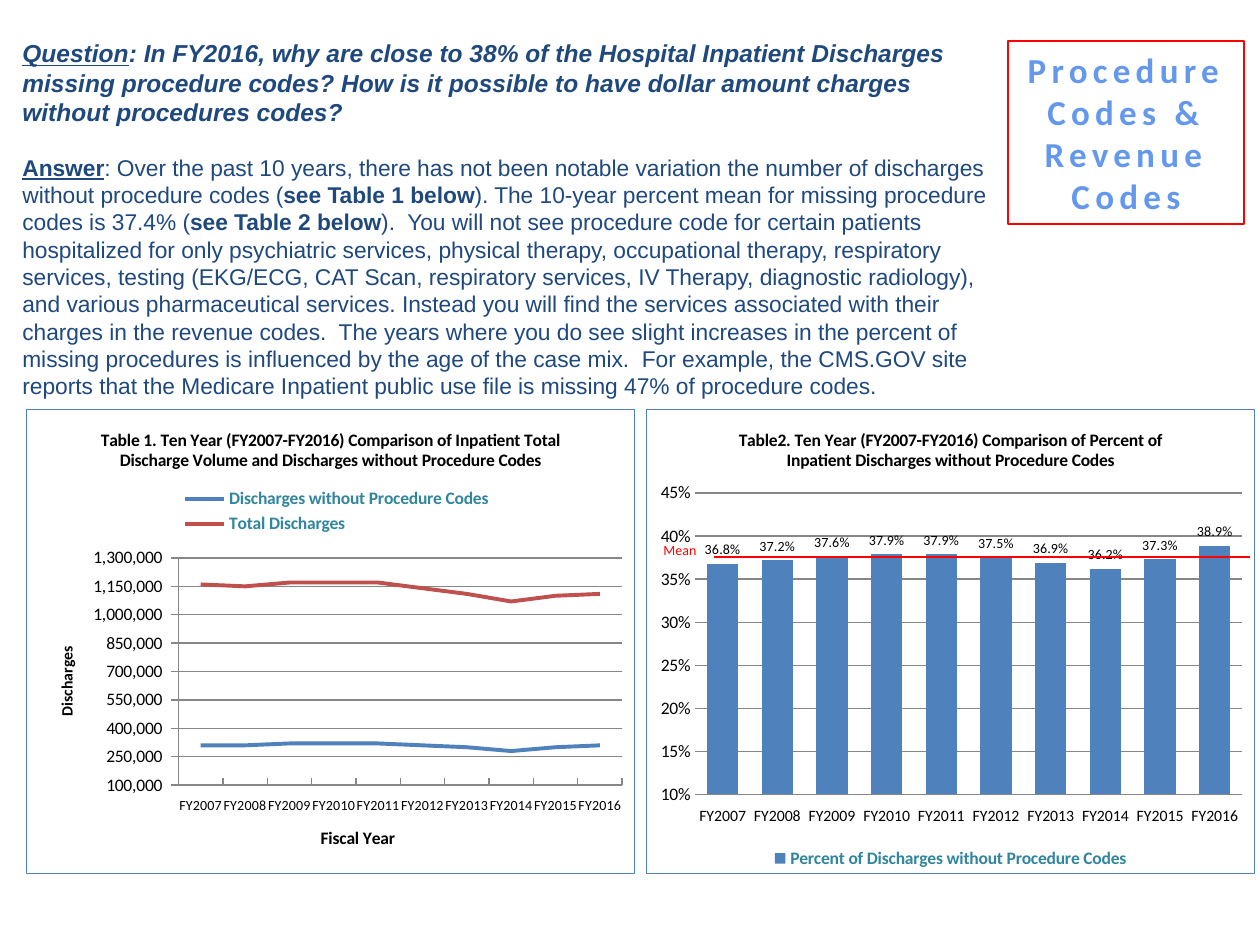
from lxml import etree
from pptx import Presentation
from pptx import util as u
from pptx.chart.data import CategoryChartData
from pptx.dml.color import RGBColor
from pptx.enum import chart as ch, shapes, text
from pptx.oxml import parse_xml
from pptx.oxml.ns import nsdecls, qn

EMU_PER_PIXEL = 914400 / 126
NAVY, BLUE, TEAL, RED, GRAY = "1F497D", "4F81BD", "31859C", "FF0000", "868686"


def px(*lengths):
    return [u.Emu(round(length * EMU_PER_PIXEL)) for length in lengths]


def color(value):
    return RGBColor.from_string(value)


presentation = Presentation()
presentation.slide_width, presentation.slide_height = px(1260, 945)
slide = presentation.slides.add_slide(presentation.slide_layouts[5])

# Title box
title = slide.shapes.title
title.left, title.top, title.width, title.height = px(1008, 41, 236, 183)
title.line.color.rgb = color(RED)
title.line.width = u.Pt(0.75)
frame = title.text_frame
frame.text = "Procedure Codes & Revenue Codes"
frame.word_wrap = True
frame.auto_size = text.MSO_AUTO_SIZE.NONE
frame.vertical_anchor = text.MSO_ANCHOR.MIDDLE
frame.paragraphs[0].alignment = text.PP_ALIGN.CENTER
run = frame.paragraphs[0].runs[0]
run.font.name, run.font.size, run.font.bold = "Calibri", u.Pt(20), True
run.font.fill.gradient()
run.font.fill.gradient_angle = 270
for stop, (position, value) in zip(run.font.fill.gradient_stops, [(0.1, "6398ED"), (0.75, "265EA0")]):
    stop.position = position
    stop.color.rgb = color(value)
properties = run.font._element
properties.set("spc", "300")
properties.insert(0, parse_xml(
    f'<a:ln {nsdecls("a")} w="11430"><a:solidFill><a:srgbClr val="F4F6F9"/></a:solidFill></a:ln>'))

# Charts: each entry holds what differs between the two
years = [f"FY{year}" for year in range(2007, 2017)]
charts = [
    dict(kind=ch.XL_CHART_TYPE.COLUMN_CLUSTERED, left=646,
         title="Table2. Ten Year (FY2007-FY2016) Comparison of Percent of "
               "Inpatient Discharges without Procedure Codes",
         series=[("Percent of Discharges without Procedure Codes", BLUE,
                  [0.368, 0.372, 0.376, 0.379, 0.379, 0.375, 0.369, 0.362, 0.373, 0.389])],
         low=0.1, high=0.45, step=0.05, format="0%", category_size=9,
         legend=ch.XL_LEGEND_POSITION.BOTTOM, plot_area=(0.08, 0.18, 0.9, 0.65)),
    dict(kind=ch.XL_CHART_TYPE.LINE_STACKED, left=26,
         title="Table 1. Ten Year (FY2007-FY2016) Comparison of Inpatient Total "
               "Discharge Volume and Discharges without Procedure Codes",
         series=[("Discharges without Procedure Codes", BLUE,
                  [310000, 310000, 320000, 320000, 320000, 310000, 300000, 280000, 300000, 310000]),
                 ("Total Discharges", "C0504D",
                  [850000, 840000, 850000, 850000, 850000, 830000, 810000, 790000, 800000, 800000])],
         low=100000, high=1300000, step=150000, format="#,##0_)", category_size=8,
         legend=ch.XL_LEGEND_POSITION.TOP, plot_area=(0.25, 0.32, 0.73, 0.49)),
]
for item in charts:
    is_line = item["kind"] == ch.XL_CHART_TYPE.LINE_STACKED
    data = CategoryChartData()
    data.categories = years
    for name, _, values in item["series"]:
        data.add_series(name, values)
    chart = slide.shapes.add_chart(item["kind"], *px(item["left"], 409, 609, 465), data).chart
    chart.font.name, chart.font.size = "Calibri", u.Pt(18)
    chart.font.color.rgb = color("000000")

    # Titles of the chart and its axes
    categories, values_axis = chart.category_axis, chart.value_axis
    titles = [(chart, item["title"], 10)]
    if is_line:
        titles += [(categories, "Fiscal Year", 10), (values_axis, "Discharges", 9)]
    for owner, words, size in titles:
        title_frame = (owner.chart_title if owner is chart else owner.axis_title).text_frame
        title_frame.text = words
        font = title_frame.paragraphs[0].runs[0].font
        font.name, font.size, font.bold = "Calibri", u.Pt(size), True
        font.color.rgb = color("000000")

    # Axes
    for axis, size in [(categories, item["category_size"]), (values_axis, 10)]:
        axis.tick_labels.font.size = u.Pt(size)
        axis.format.line.color.rgb = color(GRAY)
        axis.major_tick_mark = axis.minor_tick_mark = ch.XL_TICK_MARK.NONE
    categories.tick_label_position = ch.XL_TICK_LABEL_POSITION.LOW
    values_axis.minimum_scale, values_axis.maximum_scale = item["low"], item["high"]
    values_axis.major_unit = item["step"]
    values_axis.tick_labels.number_format = item["format"]
    values_axis.tick_labels.number_format_is_linked = False
    values_axis.major_gridlines.format.line.color.rgb = color(GRAY)

    # Series
    plot = chart.plots[0]
    plot.vary_by_categories = False
    for series, (_, value, _) in zip(plot.series, item["series"]):
        if is_line:
            series.smooth = False
            series.marker.style = ch.XL_MARKER_STYLE.NONE
            series.format.line.color.rgb = color(value)
            series.format.line.width = u.Pt(2.25)
        else:
            series.format.fill.solid()
            series.format.fill.fore_color.rgb = color(value)
    if is_line:
        categories.major_tick_mark = ch.XL_TICK_MARK.INSIDE
        values_axis.major_tick_mark = ch.XL_TICK_MARK.OUTSIDE
    else:
        values_axis.format.line.fill.background()
        plot.gap_width, plot.overlap = 75, -25
        plot.has_data_labels = True
        labels = plot.data_labels
        labels.show_value = True
        labels.position = ch.XL_LABEL_POSITION.OUTSIDE_END
        labels.number_format, labels.number_format_is_linked = "0.0%", False
        labels.font.size = u.Pt(8)

    # Legend
    chart.has_legend = True
    legend = chart.legend
    legend.position, legend.include_in_layout = item["legend"], False
    legend.font.size, legend.font.bold = u.Pt(10), True
    legend.font.color.rgb = color(TEAL)

    # Fixed places of the plot area and the two-row legend
    chart_space = chart._chartSpace
    places = [(chart_space.find(".//" + qn("c:plotArea")), 0, item["plot_area"])]
    if is_line:
        places.append((legend._element, 1, (0.24, 0.16, 0.54, 0.12)))
    for parent, index, place in places:
        for old in parent.findall(qn("c:layout")):
            parent.remove(old)
        layout = parse_xml(f'<c:layout {nsdecls("c")}><c:manualLayout/></c:layout>')
        settings = [("xMode", "edge"), ("yMode", "edge"), *zip("xywh", place)]
        if index == 0:
            settings.insert(0, ("layoutTarget", "inner"))
        for tag, value in settings:
            etree.SubElement(layout[0], qn(f"c:{tag}")).set("val", str(value))
        parent.insert(index, layout)

    # Frame around the chart
    chart_space.find(qn("c:chart")).addnext(parse_xml(
        f'<c:spPr {nsdecls("c", "a")}><a:solidFill><a:srgbClr val="FFFFFF"/></a:solidFill>'
        f'<a:ln w="9525"><a:solidFill><a:srgbClr val="{BLUE}"/></a:solidFill></a:ln></c:spPr>'))

# Question and answer: words, bold, underlined
paragraphs = [
    (14, 16.8, True, [
        ("Question", True, True),
        (": In FY2016, why are close to 38% of the Hospital Inpatient Discharges missing procedure codes? "
         "How is it possible to have dollar amount charges without procedures codes?", True, False)]),
    (13, 15.6, False, [
        ("Answer", True, True),
        (": Over the past 10 years, there has not been notable variation the number of discharges "
         "without procedure codes (", False, False),
        ("see Table 1 below", True, False),
        ("). The 10-year percent mean for missing procedure codes is 37.4% (", False, False),
        ("see Table 2 below", True, False),
        (").  You will not see procedure code for certain patients hospitalized for only psychiatric "
         "services, physical therapy, occupational therapy, respiratory services, testing (EKG/ECG, CAT "
         "Scan, respiratory services, IV Therapy, diagnostic radiology), and various pharmaceutical "
         "services. Instead you will find the services associated with their charges in the revenue "
         "codes.  The years where you do see slight increases in the percent of missing procedures is "
         "influenced by the age of the case mix.  For example, the CMS.GOV site reports that the Medicare "
         "Inpatient public use file is missing 47% of procedure codes.", False, False)]),
]
frame = slide.shapes.add_textbox(*px(10, 32, 1008, 378)).text_frame
frame.word_wrap = True
for index, (size, spacing, italic, runs) in enumerate(paragraphs):
    paragraph = frame.add_paragraph() if index else frame.paragraphs[0]
    paragraph.line_spacing = u.Pt(spacing)
    paragraph.space_after = u.Pt(0 if index else 15.6)
    for words, bold, underline in runs:
        run = paragraph.add_run()
        run.text = words
        run.font.name, run.font.size = "Arial", u.Pt(size)
        run.font.bold, run.font.italic, run.font.underline = bold, italic, underline
        run.font.color.rgb = color(NAVY)

# Mean line and its label
mean_line = slide.shapes.add_connector(shapes.MSO_CONNECTOR.STRAIGHT, *px(714, 557, 1250, 557))
mean_line.line.color.rgb = color(RED)
mean_line.line.width = u.Pt(1.5)
etree.SubElement(mean_line._element.spPr, qn("a:effectLst"))
frame = slide.shapes.add_textbox(*px(651, 535, 59, 30)).text_frame
frame.word_wrap = False
frame.text = "Mean"
font = frame.paragraphs[0].runs[0].font
font.name, font.size = "Calibri", u.Pt(8)
font.color.rgb = color(RED)

presentation.save("out.pptx")
